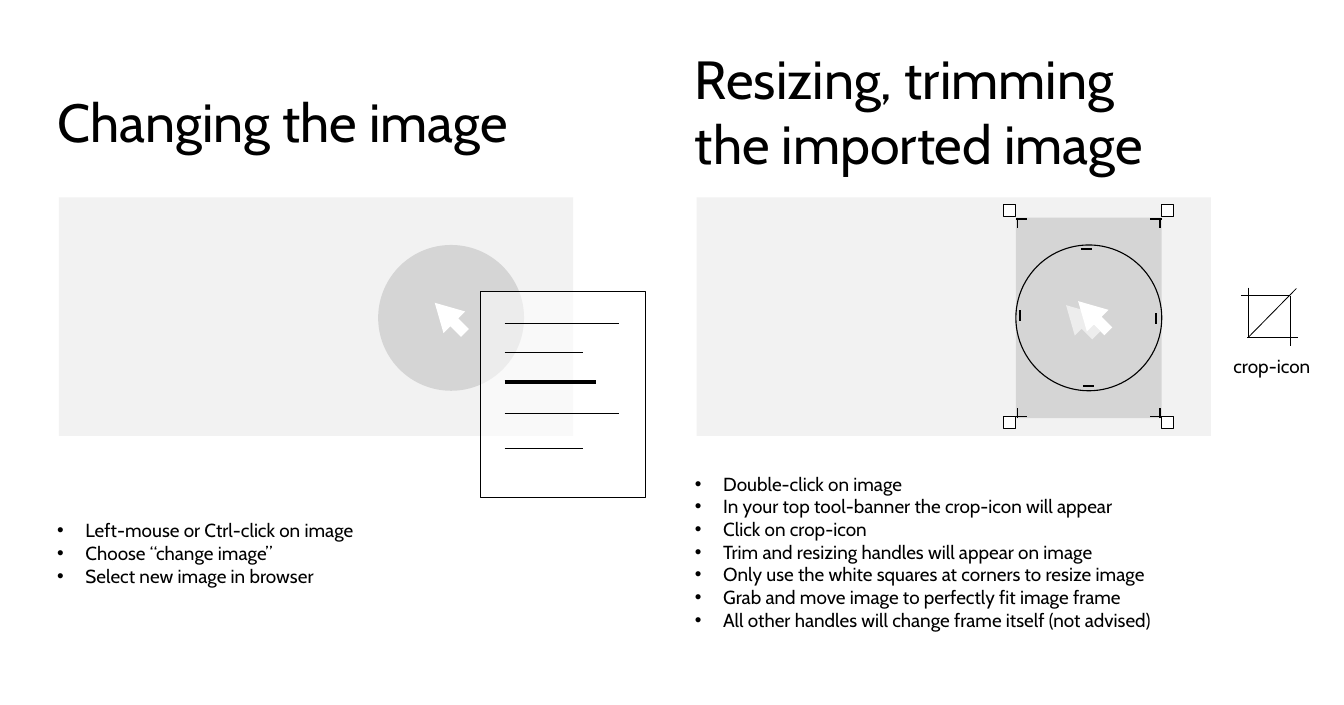
"""Build the two-panel guide on changing and cropping images."""
from itertools import product

from lxml.etree import SubElement
from pptx import Presentation
from pptx.dml.color import RGBColor
from pptx.enum.shapes import MSO_CONNECTOR, MSO_SHAPE
from pptx.enum.text import MSO_ANCHOR, MSO_AUTO_SIZE, PP_ALIGN
from pptx.oxml.ns import qn
from pptx.util import Inches, Pt

BLACK = RGBColor(0x00, 0x00, 0x00)
WHITE = RGBColor(0xFF, 0xFF, 0xFF)
FRAME_GREY = RGBColor(0xF2, 0xF2, 0xF2)
IMAGE_GREY = RGBColor(0xD5, 0xD5, 0xD5)
GHOST_GREY = RGBColor(0xED, 0xED, 0xED)

CELL = 0.1
LEFT_PANEL, RIGHT_PANEL = 7.3, 86.4
TEXT_INSET = 1.2
FRAME_TOP, FRAME_WIDTH, FRAME_HEIGHT = 24.5, 63.8, 29.6
CIRCLE_OFFSET, CIRCLE_TOP, CIRCLE_SIZE = 39.6, 30.4, 18.1
CROP_LEFT = RIGHT_PANEL + CIRCLE_OFFSET
CROP_TOP, CROP_HEIGHT = 27, 24.9
HEADING_SIZE, BODY_SIZE = 48, 16.9

CHANGE_STEPS = [
    "Left-mouse or Ctrl-click on image",
    "Choose “change image”",
    "Select new image in browser",
]
CROP_STEPS = [
    "Double-click on image",
    "In your top tool-banner the crop-icon will appear",
    "Click on crop-icon",
    "Trim and resizing handles will appear on image",
    "Only use the white squares at corners to resize image",
    "Grab and move image to perfectly fit image frame",
    "All other handles will change frame itself (not advised)",
]
MENU_ENTRIES = [(40.1, 14.2, 1), (43.7, 9.7, 1), (47.4, 11.3, 3),
                (51.3, 14.2, 1), (55.7, 9.7, 1)]
CROP_ICON_STROKES = [
    (154.8, 35.7, 154.8, 41.8), (154.7, 41.9, 161, 41.9),
    (160, 36.7, 160, 42.9), (153.9, 36.7, 160, 36.7),
    (154.9, 41.8, 160.8, 35.8),
]
EDGE_TICKS = [
    (126.5, 38.5, 126.5, 39.8), (134.3, 47.9, 135.7, 47.9),
    (134.1, 30.9, 135.5, 30.9), (143.4, 38.9, 143.4, 40.2),
]


def cells(*counts):
    """Convert grid cells to slide lengths."""
    return [Inches(count * CELL) for count in counts]


def add_figure(slide, kind, area, fill=None, outline=None):
    """Add a preset shape with an optional fill and outline width."""
    figure = slide.shapes.add_shape(kind, *cells(*area))
    figure.shadow.inherit = False
    if fill is None:
        figure.fill.background()
    else:
        figure.fill.solid()
        figure.fill.fore_color.rgb = fill
    if outline is None:
        figure.line.fill.background()
    else:
        figure.line.color.rgb = BLACK
        figure.line.width = Pt(outline)
    return figure


def add_stroke(slide, ends, width):
    """Add a straight black line between two grid points."""
    stroke = slide.shapes.add_connector(MSO_CONNECTOR.STRAIGHT, *cells(*ends))
    stroke.line.color.rgb = BLACK
    stroke.line.width = Pt(width)
    SubElement(stroke.element.spPr, qn("a:effectLst"))


def add_pointer(slide, left, top, fill):
    """Add a mouse pointer tilted to the upper left."""
    pointer = add_figure(slide, MSO_SHAPE.UP_ARROW, (left, top, 3.8, 5.3), fill)
    pointer.rotation = 315
    pointer.adjustments[0] = 0.365
    pointer.adjustments[1] = 0.904


def write_run(paragraph, text, size):
    """Add one formatted run."""
    run = paragraph.add_run()
    run.text = text
    run.font.name = "Cabin"
    run.font.size = Pt(size)
    run.font.bold = False
    run.font.color.rgb = BLACK


def place_text(holder, area, wrap=True):
    """Move a text holder onto the grid and return its frame."""
    holder.left, holder.top, holder.width, holder.height = cells(*area)
    frame = holder.text_frame
    frame.auto_size = MSO_AUTO_SIZE.NONE
    frame.word_wrap = wrap
    frame.vertical_anchor = MSO_ANCHOR.TOP
    return frame


def tighten(paragraph, alignment):
    """Align a paragraph and remove its surrounding space."""
    paragraph.alignment = alignment
    paragraph.space_before = paragraph.space_after = Pt(0)
    paragraph.line_spacing = 1.0


def fill_heading(holder, area, lines):
    """Write a heading, one line of text per entry."""
    paragraph = place_text(holder, area).paragraphs[0]
    tighten(paragraph, PP_ALIGN.LEFT)
    for number, line in enumerate(lines):
        if number:
            paragraph.add_line_break()
        write_run(paragraph, line, HEADING_SIZE)


def fill_steps(holder, area, steps):
    """Write a bulleted list with a hanging indent."""
    frame = place_text(holder, area)
    for number, step in enumerate(steps):
        paragraph = frame.add_paragraph() if number else frame.paragraphs[0]
        properties = paragraph._p.get_or_add_pPr()
        properties.set("marL", str(Inches(0.35)))
        properties.set("indent", str(-Inches(0.35)))
        tighten(paragraph, PP_ALIGN.LEFT)
        write_run(paragraph, step, BODY_SIZE)


def add_image_frame(slide, panel):
    """Add the pale frame of a panel."""
    area = (panel, FRAME_TOP, FRAME_WIDTH, FRAME_HEIGHT)
    add_figure(slide, MSO_SHAPE.RECTANGLE, area, FRAME_GREY)


def add_circle(slide, panel, fill=None, outline=None):
    """Add the round image mask of a panel."""
    area = (panel + CIRCLE_OFFSET, CIRCLE_TOP, CIRCLE_SIZE, CIRCLE_SIZE)
    add_figure(slide, MSO_SHAPE.OVAL, area, fill, outline)


def add_context_menu(slide):
    """Add the translucent menu with its entries."""
    menu = add_figure(slide, MSO_SHAPE.RECTANGLE, (59.6, 36.2, 20.5, 25.6), WHITE, 1)
    color = menu.element.spPr.find(qn("a:solidFill"))[0]
    SubElement(color, qn("a:alpha"), val="56000")
    for row, length, width in MENU_ENTRIES:
        add_stroke(slide, (62.6, row, 62.6 + length, row), width)


def add_crop_handles(slide):
    """Add resize squares, corner brackets and edge ticks."""
    columns = [(CROP_LEFT, 1, 124.5), (CROP_LEFT + CIRCLE_SIZE, -1, 144.1)]
    rows = [(CROP_TOP, 1, 25.4), (CROP_TOP + CROP_HEIGHT, -1, 51.7)]
    for (x, inward, square_left), (y, downward, square_top) in product(columns, rows):
        square = (square_left, square_top, 1.4, 1.4)
        add_figure(slide, MSO_SHAPE.RECTANGLE, square, WHITE, 0.5)
        upright, level = x + 0.2 * inward, y + 0.2 * downward
        add_stroke(slide, (upright, y, upright, y + 1.3 * downward), 1.5)
        add_stroke(slide, (x, level, x + 1.4 * inward, level), 1.5)
    for tick in EDGE_TICKS:
        add_stroke(slide, tick, 1.5)


def add_crop_icon(slide):
    """Add the crop icon and its caption."""
    for stroke in CROP_ICON_STROKES:
        add_stroke(slide, stroke, 0.75)
    area = (151.7, 43.5, 12.1, 3.9)
    caption = place_text(slide.shapes.add_textbox(*cells(*area)), area, wrap=False)
    tighten(caption.paragraphs[0], PP_ALIGN.CENTER)
    write_run(caption.paragraphs[0], "crop-icon", BODY_SIZE)


def main():
    """Build and save the slide."""
    deck = Presentation()
    deck.slide_width, deck.slide_height = cells(166.7, 87.5)
    slide = deck.slides.add_slide(deck.slide_layouts[4])
    title, crop_heading, change_list, crop_list = [
        slide.placeholders[index] for index in (0, 1, 2, 4)]
    unused = slide.placeholders[3].element
    unused.getparent().remove(unused)

    left_text, right_text = LEFT_PANEL - TEXT_INSET, RIGHT_PANEL - TEXT_INSET
    fill_heading(title, (left_text, 10.5, 62.2, 9.1), ["Changing the image"])
    fill_heading(crop_heading, (right_text, 5.2, 62.3, 17.2),
                 ["Resizing, trimming", "the imported image"])
    fill_steps(change_list, (left_text, 63.9, 40.8, 9.5), CHANGE_STEPS)
    fill_steps(crop_list, (right_text, 58.1, 63.4, 20.9), CROP_STEPS)

    add_image_frame(slide, LEFT_PANEL)
    add_circle(slide, LEFT_PANEL, fill=IMAGE_GREY)
    add_context_menu(slide)
    add_pointer(slide, 53.9, 36.8, WHITE)

    add_image_frame(slide, RIGHT_PANEL)
    crop_area = (CROP_LEFT, CROP_TOP, CIRCLE_SIZE, CROP_HEIGHT)
    add_figure(slide, MSO_SHAPE.RECTANGLE, crop_area, IMAGE_GREY)
    add_circle(slide, RIGHT_PANEL, outline=1)
    add_crop_handles(slide)
    add_crop_icon(slide)
    add_pointer(slide, 132.2, 37.1, GHOST_GREY)
    add_pointer(slide, 133.7, 36.6, WHITE)
    deck.save("out.pptx")


if __name__ == "__main__":
    main()
